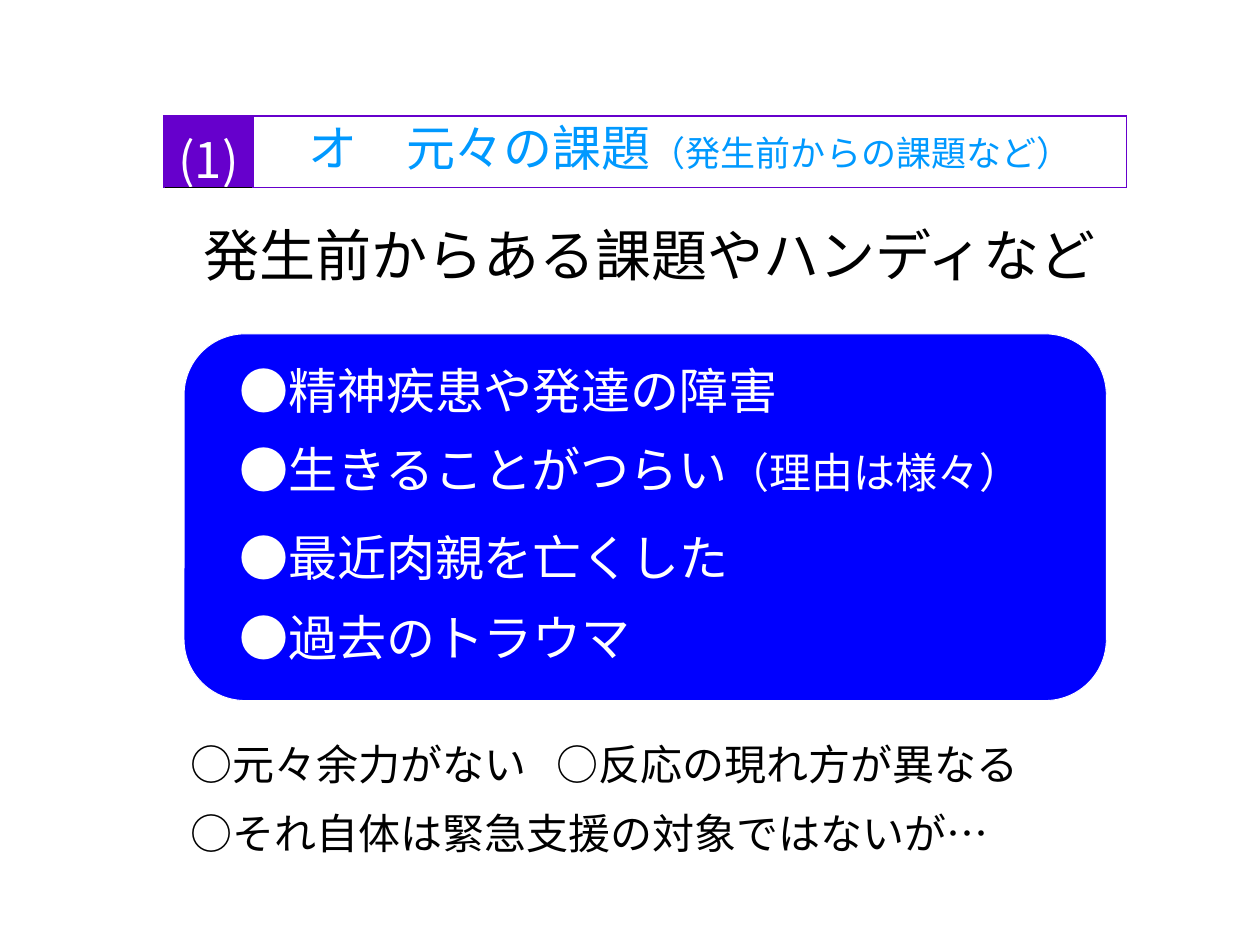
from dataclasses import dataclass

from lxml.etree import SubElement
from pptx import Presentation
from pptx.dml.color import RGBColor
from pptx.enum.shapes import MSO_SHAPE
from pptx.enum.text import MSO_ANCHOR, MSO_AUTO_SIZE, PP_ALIGN
from pptx.oxml.ns import qn
from pptx.util import Pt


@dataclass(frozen=True)
class Theme:
    font: str = "Noto Sans CJK JP"
    heading_font: str = "Arial"
    black: str = "000000"
    white: str = "FFFFFF"
    blue: str = "0000FF"
    sky: str = "0099FF"
    purple: str = "6600CC"
    title: int = 32
    large: int = 28
    medium: int = 24
    small: int = 20
    inset: float = 3.6


THEME = Theme()


def color(value):
    return RGBColor.from_string(value)


def format_span(span, size, fill, font=THEME.font):
    span.font.size = Pt(size)
    span.font.color.rgb = color(fill)
    span.font.name = font
    SubElement(span.font._element, qn("a:ea"), typeface=font)


def write_spans(para, parts, fill, font=THEME.font):
    for text, size in parts:
        span = para.add_run()
        span.text = text
        format_span(span, size, fill, font)


def set_insets(holder):
    holder.margin_left = holder.margin_right = Pt(THEME.inset)
    holder.margin_top = holder.margin_bottom = Pt(THEME.inset)


def add_title(page, text):
    title = page.shapes.title
    title.left, title.top, title.width, title.height = Pt(93.6), Pt(128.2), Pt(555.8), Pt(33.8)
    frame = title.text_frame
    frame.text = text
    frame.auto_size = MSO_AUTO_SIZE.NONE
    frame.vertical_anchor = MSO_ANCHOR.MIDDLE
    para = frame.paragraphs[0]
    para.alignment = PP_ALIGN.CENTER
    format_span(para.runs[0], THEME.title, THEME.black)


def add_panel(page):
    panel = page.shapes.add_shape(
        MSO_SHAPE.ROUNDED_RECTANGLE, Pt(105.2), Pt(190.8), Pt(527), Pt(209.5)
    )
    panel.shadow.inherit = False
    panel.fill.solid()
    panel.fill.fore_color.rgb = color(THEME.blue)
    panel.line.color.rgb = color(THEME.white)
    panel.line.width = Pt(0.5)


def add_line_of_text(page, left, top, width, height, parts, fill):
    box = page.shapes.add_textbox(Pt(left), Pt(top), Pt(width), Pt(height))
    frame = box.text_frame
    frame.word_wrap = True
    frame.auto_size = MSO_AUTO_SIZE.SHAPE_TO_FIT_TEXT
    set_insets(frame)
    write_spans(frame.paragraphs[0], parts, fill)


def format_cell(cell, parts, fill, ink, font, bottom):
    set_insets(cell)
    write_spans(cell.text_frame.paragraphs[0], parts, ink, font)
    properties = cell._tc.get_or_add_tcPr()
    for side in "LRTB":
        border = SubElement(properties, qn(f"a:ln{side}"), w=str(Pt(1)))
        solid = SubElement(border, qn("a:solidFill"))
        SubElement(solid, qn("a:srgbClr"), val=bottom if side == "B" else THEME.purple)
    cell.fill.solid()
    cell.fill.fore_color.rgb = color(fill)


def add_heading_table(page):
    table = page.shapes.add_table(1, 2, Pt(93.6), Pt(66.2), Pt(550), Pt(39.6)).table
    table.first_row = table.horz_banding = False
    table.columns[0].width, table.columns[1].width = Pt(51), Pt(499)
    number, heading = table.cell(0, 0), table.cell(0, 1)
    format_cell(number, [("(1)", THEME.large)],
                THEME.purple, THEME.white, THEME.font, THEME.black)
    number.text_frame.paragraphs[0].alignment = PP_ALIGN.CENTER
    format_cell(heading,
                [("　オ　元々の課題", THEME.large), ("（発生前からの課題など）", THEME.small)],
                THEME.white, THEME.sky, THEME.heading_font, THEME.purple)


def main():
    deck = Presentation()
    deck.slide_width, deck.slide_height = Pt(720), Pt(540)
    page = deck.slides.add_slide(deck.slide_layouts[5])
    add_panel(page)
    add_title(page, "発生前からある課題やハンディなど")

    issues = [
        (202.3, 453.6, [("●精神疾患や発達の障害", THEME.large)]),
        (247.7, 515.5, [("●生きることがつらい", THEME.large), ("（理由は様々）", THEME.medium)]),
        (298.1, 453.6, [("●最近肉親を亡くした", THEME.large)]),
        (343.4, 453.6, [("●過去のトラウマ", THEME.large)]),
    ]
    for top, width, parts in issues:
        add_line_of_text(page, 133.2, top, width, 39.6, parts, THEME.white)

    remarks = [
        (105.1, 418.3, 260.6, "○元々余力がない"),
        (314.6, 418.3, 311.8, "○反応の現れ方が異なる"),
        (105.1, 457.9, 567.4, "○それ自体は緊急支援の対象ではないが…"),
    ]
    for left, top, width, text in remarks:
        add_line_of_text(page, left, top, width, 34.6, [(text, THEME.medium)], THEME.black)

    add_heading_table(page)
    deck.save("out.pptx")


if __name__ == "__main__":
    main()
